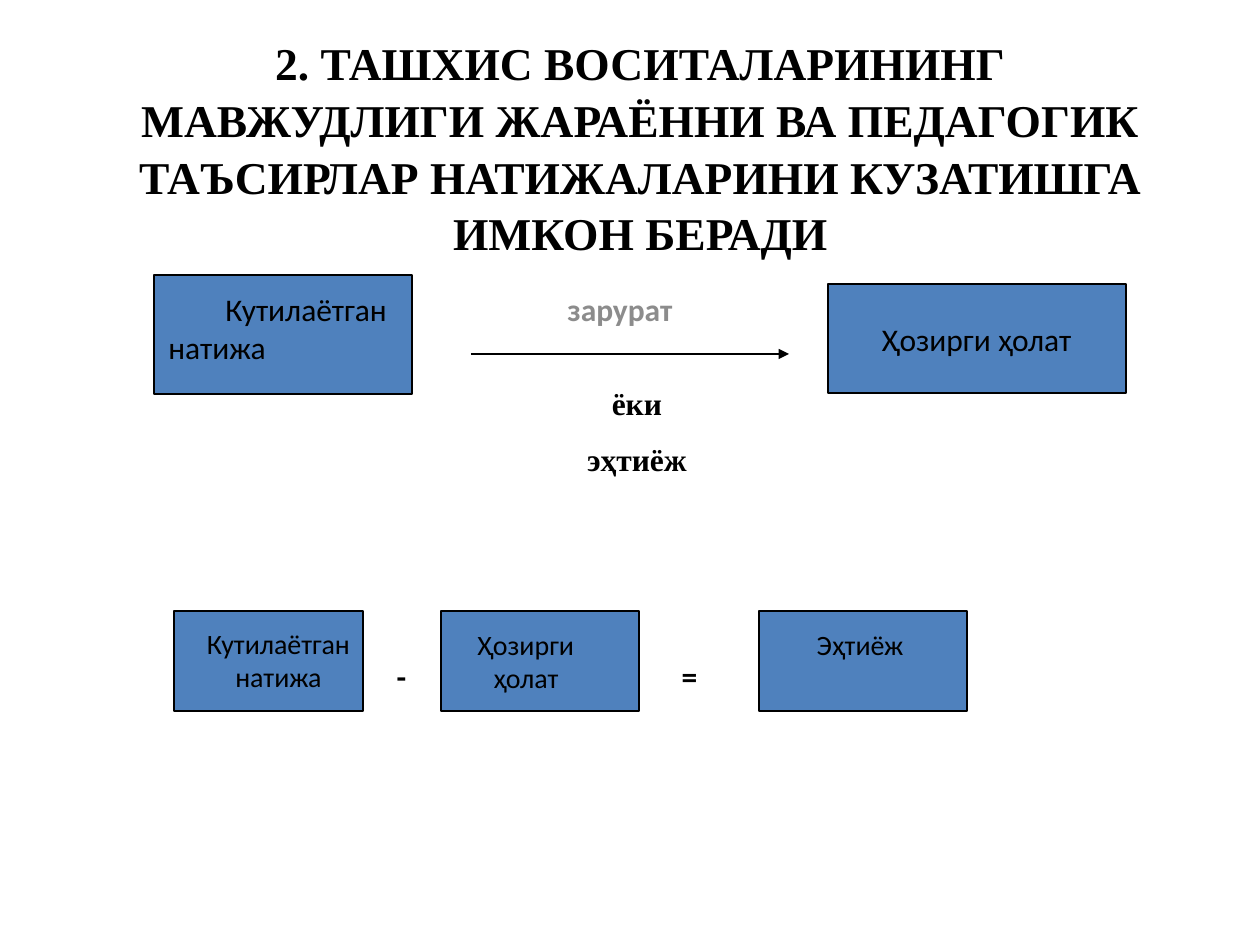
import pptx
import pptx.dml.color
import pptx.enum.shapes
import pptx.enum.text
import pptx.oxml
import pptx.oxml.ns
import pptx.util

EMU_PER_PX = 914400 / 126
COLORS = {"box": "4F81BD", "ink": "000000", "muted": "8C8C8C"}
ALIGN = pptx.enum.text.PP_ALIGN
ANCHOR = pptx.enum.text.MSO_ANCHOR


def px(length):
    return pptx.util.Emu(round(length * EMU_PER_PX))


def color(name):
    return pptx.dml.color.RGBColor.from_string(COLORS[name])


def write(holder, paragraphs, ink="ink", anchor=ANCHOR.TOP, align=ALIGN.CENTER,
          spacing=None, gap=0, **font_format):
    frame = holder.text_frame
    frame.word_wrap = True
    frame.vertical_anchor = anchor
    font_values = {"name": "Calibri", "size": 18, "bold": False} | font_format
    font_values["size"] = pptx.util.Pt(font_values["size"])
    for number, wording in enumerate(paragraphs):
        paragraph = frame.add_paragraph() if number else frame.paragraphs[0]
        paragraph.alignment = align
        paragraph.line_spacing = spacing
        if number:
            paragraph.space_before = pptx.util.Pt(gap)
        run = paragraph.add_run()
        run.text = wording
        for attribute, value in font_values.items():
            setattr(run.font, attribute, value)
        run.font.color.rgb = color(ink)


def add_label(slide, place, *paragraphs, **text_format):
    label = slide.shapes.add_textbox(*map(px, place))
    write(label, paragraphs, **text_format)
    return label


def add_box(slide, place):
    box = slide.shapes.add_shape(
        pptx.enum.shapes.MSO_SHAPE.RECTANGLE, *map(px, place))
    box.shadow.inherit = False
    box.fill.solid()
    box.fill.fore_color.rgb = color("box")
    box.line.color.rgb = color("ink")
    box.line.width = pptx.util.Pt(0.75)
    return box


def add_arrow(slide, left, right, height):
    arrow = slide.shapes.add_connector(
        pptx.enum.shapes.MSO_CONNECTOR.STRAIGHT,
        px(left), px(height), px(right), px(height))
    arrow.line.color.rgb = color("ink")
    arrow.line.width = pptx.util.Pt(0.75)
    tail = pptx.oxml.parse_xml(
        f'<a:tailEnd {pptx.oxml.ns.nsdecls("a")} type="triangle"/>')
    arrow.line._get_or_add_ln().append(tail)
    arrow._element.spPr.append(pptx.oxml.parse_xml(
        f'<a:effectLst {pptx.oxml.ns.nsdecls("a")}/>'))


def add_need_diagram(slide):
    add_label(slide, (179, 284, 882, 273), "зарурат", ink="muted", bold=True)
    add_box(slide, (154, 275, 258, 119))
    expected = add_label(slide, (156, 284, 268, 88), "Кутилаётган натижа",
                         align=ALIGN.LEFT)
    expected.text_frame.paragraphs[0]._p.get_or_add_pPr().set(
        "indent", str(px(57)))
    current = add_box(slide, (828, 284, 298, 109))
    write(current, ["Ҳозирги ҳолат"], anchor=ANCHOR.MIDDLE)
    add_arrow(slide, 471, 789, 354)
    add_label(slide, (525, 378, 224, 107), "ёки", "эҳтиёж", gap=10,
              name="Times New Roman", bold=True)


def add_need_formula(slide):
    terms = [
        ((174, 189), (179, 620, 199, 81), "Кутилаётган натижа"),
        ((441, 198), (432, 621, 188, 81), "Ҳозирги ҳолат"),
        ((759, 208), (736, 621, 248, 47), "Эҳтиёж"),
    ]
    for (left, width), label_place, wording in terms:
        add_box(slide, (left, 611, width, 100))
        add_label(slide, label_place, wording, size=16)
    for left, width, sign in [(372, 59, "-"), (669, 41, "=")]:
        add_label(slide, (left, 651, width, 50), sign, bold=True)


def main():
    deck = pptx.Presentation()
    deck.slide_width, deck.slide_height = px(1260), px(945)
    slide = deck.slides.add_slide(deck.slide_layouts[6])
    add_label(slide, (105, 45, 1071, 203),
              "2. ТАШХИС ВОСИТАЛАРИНИНГ МАВЖУДЛИГИ ЖАРАЁННИ ВА ПЕДАГОГИК "
              "ТАЪСИРЛАР НАТИЖАЛАРИНИ КУЗАТИШГА ИМКОН БЕРАДИ",
              anchor=ANCHOR.MIDDLE, spacing=1.04,
              name="Times New Roman", size=26, bold=True)
    add_need_diagram(slide)
    add_need_formula(slide)
    deck.save("out.pptx")


if __name__ == "__main__":
    main()
